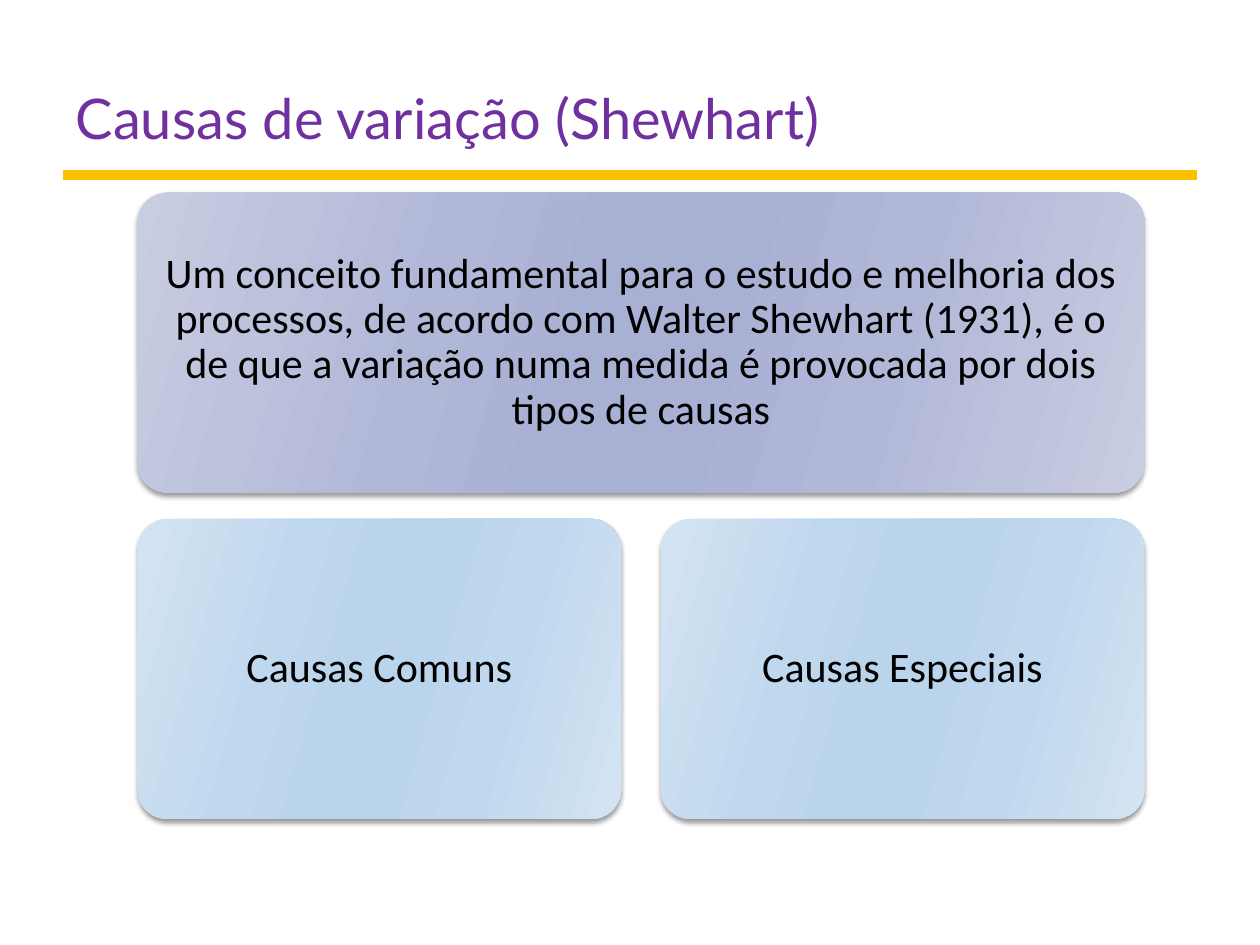
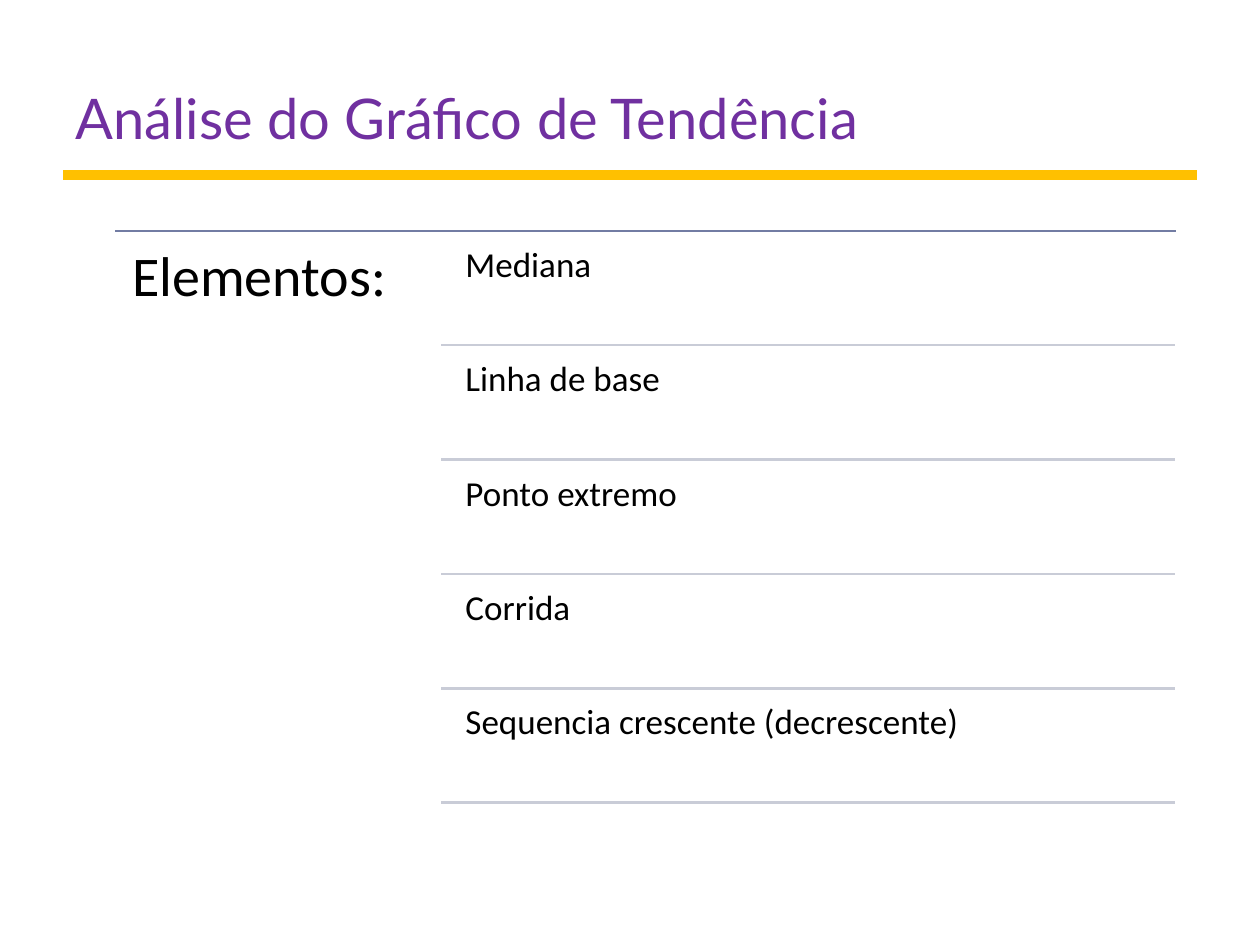
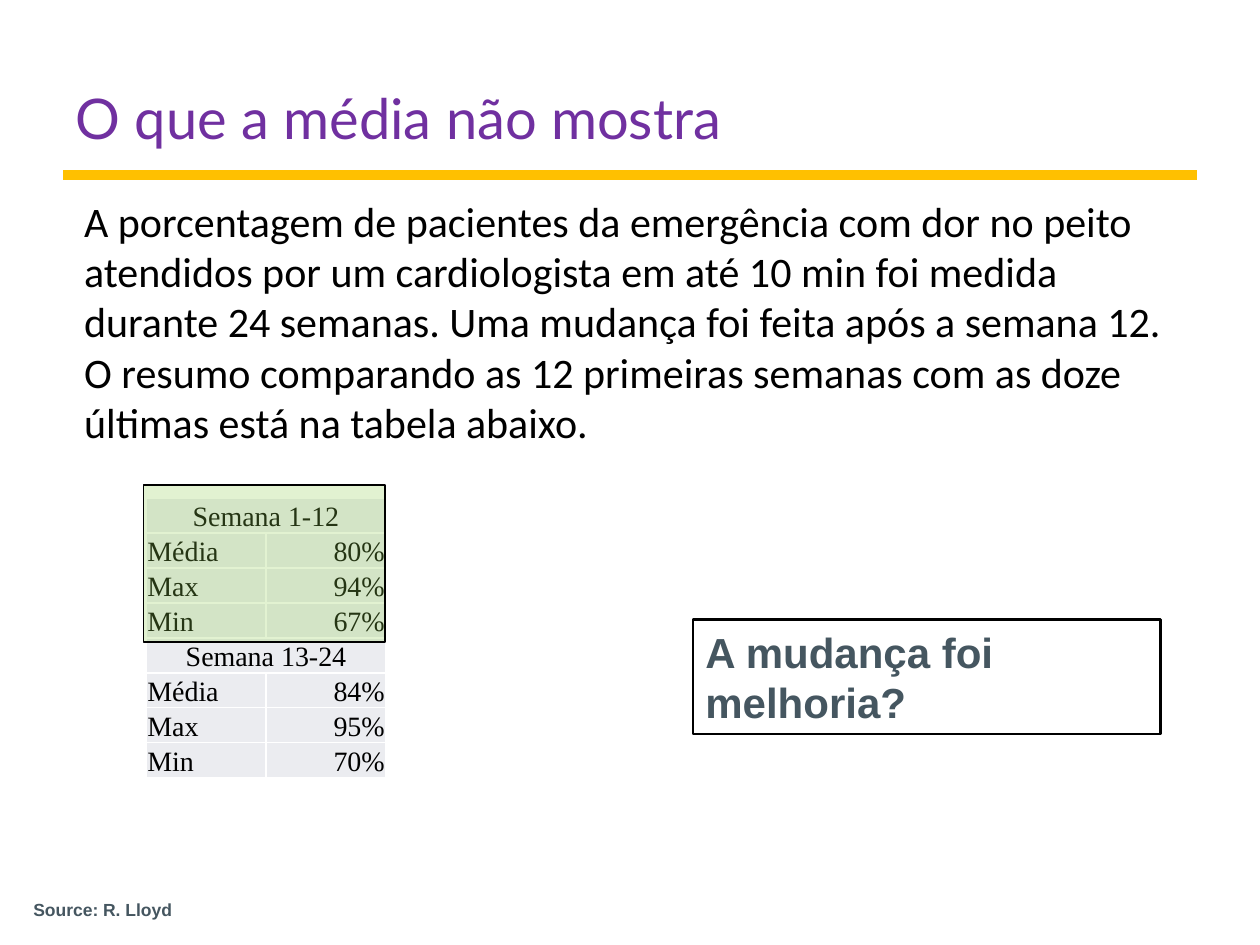
from dataclasses import dataclass

from lxml.etree import SubElement
from pptx import Presentation
from pptx.dml.color import RGBColor
from pptx.enum.shapes import MSO_CONNECTOR as Connector, MSO_SHAPE as Shape
from pptx.enum.text import MSO_ANCHOR as Anchor, PP_ALIGN as Align
from pptx.oxml.ns import qn
from pptx.util import Pt


@dataclass(frozen=True)
class Theme:
    title: str = "7030A0"
    rule: str = "FFC000"
    text: str = "000000"
    accent_text: str = "455660"
    white: str = "FFFFFF"
    list_top: str = "727CA3"
    list_line: str = "C9CCD7"
    cell: str = "EBECF0"
    highlight: str = "92D050"
    violet: tuple = ("C9CDE2", "B1B7D7", "A8B0D3")
    blue: tuple = ("D3E3F2", "C0D8EE", "BAD4EC")
    title_font: str = "Lato"
    body_font: str = "Calibri"
    note_font: str = "Arial"
    table_font: str = "Times New Roman"
    title_size: int = 32
    body_size: int = 24
    item_size: int = 20
    table_size: int = 16
    source_size: int = 10


THEME = Theme()


def rgb(value):
    return RGBColor.from_string(value)


def write(frame, text, font=THEME.body_font, size=THEME.body_size, color=THEME.text,
          bold=False, align=Align.LEFT, anchor=Anchor.TOP, spacing=None, inset=None):
    """Fill a text frame or table cell; inset is one margin or a (sides, ends) pair."""
    frame.word_wrap = True
    frame.vertical_anchor = anchor
    if inset is not None:
        frame.margin_left = frame.margin_right = Pt(inset)
        frame.margin_top = frame.margin_bottom = Pt(inset)
    para = frame.paragraphs[0]
    para.alignment = align
    para.line_spacing = spacing
    para.space_before = Pt(0)
    span = para.add_run()
    span.text = text
    span.font.name = font
    span.font.size = Pt(size)
    span.font.bold = bold
    span.font.color.rgb = rgb(color)


class Builder:
    def __init__(self, theme):
        self.theme = theme
        self.deck = Presentation()
        self.deck.slide_width, self.deck.slide_height = Pt(720), Pt(540)
        self.page = None

    def start_page(self, title):
        layout = self.deck.slide_layouts.get_by_name("Title Only")
        self.page = self.deck.slides.add_slide(layout)
        self.line(36, 684, 100, self.theme.rule, 6)
        box = self.page.shapes.title
        box.left, box.top, box.width, box.height = map(Pt, (36, 18, 648, 72))
        write(box.text_frame, title, font=self.theme.title_font,
              size=self.theme.title_size, color=self.theme.title, anchor=Anchor.BOTTOM)

    def line(self, start, end, y, color, width):
        """Draw a horizontal line at height y."""
        line = self.page.shapes.add_connector(
            Connector.STRAIGHT, Pt(start), Pt(y), Pt(end), Pt(y))
        line.line.color.rgb = rgb(color)
        line.line.width = Pt(width)
        SubElement(line._element.spPr, qn("a:effectLst"))

    def text(self, area, text, **style):
        box = self.page.shapes.add_textbox(*map(Pt, area))
        write(box.text_frame, text, **style)

    def shape(self, kind, area):
        shape = self.page.shapes.add_shape(kind, *map(Pt, area))
        shape.shadow.inherit = False
        return shape

    def frame(self, area, fill, width, opacity=100):
        """Add a rectangle with a black outline."""
        box = self.shape(Shape.RECTANGLE, area)
        box.fill.solid()
        box.fill.fore_color.rgb = rgb(fill)
        if opacity < 100:
            color = box._element.spPr.find(".//" + qn("a:srgbClr"))
            SubElement(color, qn("a:alpha"), val=str(opacity * 1000))
        box.line.color.rgb = rgb(self.theme.text)
        box.line.width = Pt(width)
        return box

    def card(self, area, colors, text):
        """Add a rounded card whose gradient runs from edge to centre and back."""
        card = self.shape(Shape.ROUNDED_RECTANGLE, area)
        card.adjustments[0] = 0.1
        card.line.fill.background()
        card.fill.gradient()
        card.fill.gradient_angle = 344
        edge, middle, center = colors
        stops = card._element.spPr.find(".//" + qn("a:gsLst"))
        stops.clear()
        for place, color in zip((0, 30, 45, 55, 73, 100),
                                (edge, middle, center, center, middle, edge)):
            stop = SubElement(stops, qn("a:gs"), pos=str(place * 1000))
            SubElement(stop, qn("a:srgbClr"), val=color)
        effects = card._element.spPr.find(qn("a:effectLst"))
        shadow = SubElement(effects, qn("a:outerShdw"), blurRad=str(Pt(3)),
                            dist=str(Pt(2)), dir="5400000", rotWithShape="0")
        color = SubElement(shadow, qn("a:srgbClr"), val=self.theme.text)
        SubElement(color, qn("a:alpha"), val="40000")
        write(card.text_frame, text, align=Align.CENTER, anchor=Anchor.MIDDLE,
              spacing=0.9, inset=7.2)

    def cell(self, cell, text, align):
        properties = cell._tc.get_or_add_tcPr()
        for side in ("lnL", "lnR", "lnT", "lnB"):
            border = SubElement(properties, qn("a:" + side), w=str(Pt(1)))
            fill = SubElement(border, qn("a:solidFill"))
            SubElement(fill, qn("a:srgbClr"), val=self.theme.white)
        cell.fill.solid()
        cell.fill.fore_color.rgb = rgb(self.theme.cell)
        cell.margin_left = cell.margin_right = cell.margin_top = Pt(0.7)
        cell.margin_bottom = Pt(0)
        cell.vertical_anchor = Anchor.BOTTOM
        if text:
            write(cell.text_frame, text, font=self.theme.table_font,
                  size=self.theme.table_size, align=align)

    def table(self, area, rows):
        """Add a two-column table; a row with no value becomes a merged heading."""
        table = self.page.shapes.add_table(len(rows), 2, *map(Pt, area)).table
        table.first_row = table.horz_banding = False
        for row, (label, value) in enumerate(rows):
            left, right = table.cell(row, 0), table.cell(row, 1)
            self.cell(left, label, Align.LEFT if value else Align.CENTER)
            self.cell(right, value, Align.RIGHT)
            if not value:
                left.merge(right)


def build_causes(builder):
    builder.start_page("Causas de variação (Shewhart)")
    left, width, height, card_width = 78.5, 575.5, 171.5, 276.5
    builder.card(
        (left, 110, width, height), THEME.violet,
        "Um conceito fundamental para o estudo e melhoria dos processos, de acordo com "
        "Walter Shewhart (1931), é o de que a variação numa medida é provocada por dois "
        "tipos de causas")
    for column, cause in enumerate(("Causas Comuns", "Causas Especiais")):
        x = left + column * (width - card_width)
        builder.card((x, 296.5, card_width, height), THEME.blue, cause)


def build_elements(builder):
    builder.start_page("Análise do Gráfico de Tendência")
    top, pitch = 131.9, 65.35
    builder.line(66, 672, top, THEME.list_top, 1.5)
    builder.text((66, top, 186, 330), "Elementos:", size=THEME.title_size,
                 spacing=0.9, inset=9.6)
    items = ("Mediana", "Linha de base", "Ponto extremo", "Corrida",
             "Sequencia crescente (decrescente)")
    for index, item in enumerate(items):
        y = top + index * pitch
        builder.text((260, y + 3.3, 412, 62), item, size=THEME.item_size,
                     spacing=0.9, inset=6)
        builder.line(252, 671.5, y + pitch, THEME.list_line, 1.5)


def build_average(builder):
    builder.start_page("O que a média não mostra")
    question = builder.frame((396, 354, 267, 65.5), THEME.white, 1.5)
    note = dict(font=THEME.note_font, color=THEME.accent_text, bold=True)
    write(question.text_frame, "A mudança foi melhoria?", anchor=Anchor.MIDDLE, **note)
    builder.text((12, 510, 264, 19.5), "Source: R. Lloyd", size=THEME.source_size, **note)
    builder.table((83.5, 284.5, 137, 160), (
        ("Semana 1-12", ""), ("Média", "80%"), ("Max", "94%"), ("Min", "67%"),
        ("Semana 13-24", ""), ("Média", "84%"), ("Max", "95%"), ("Min", "70%")))
    builder.frame((82, 277, 138, 90), THEME.highlight, 1, opacity=26)
    builder.text(
        (41, 108, 646, 152.5),
        "A porcentagem de pacientes da emergência com dor no peito atendidos por um "
        "cardiologista em até 10 min foi medida durante 24 semanas. Uma mudança foi feita "
        "após a semana 12. O resumo comparando as 12 primeiras semanas com as doze últimas "
        "está na tabela abaixo.")


def main():
    builder = Builder(THEME)
    for build in (build_causes, build_elements, build_average):
        build(builder)
    builder.deck.save("out.pptx")


if __name__ == "__main__":
    main()
